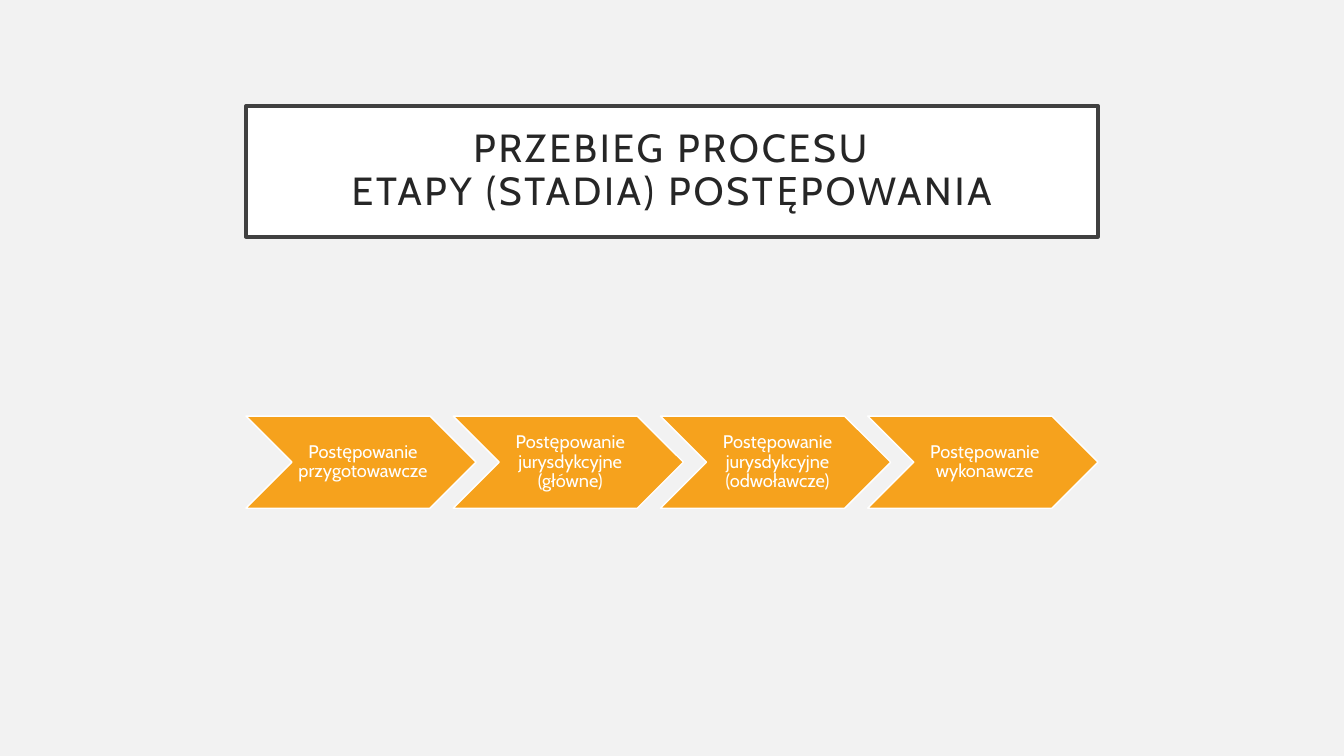
from dataclasses import dataclass

from pptx import Presentation
from pptx.dml.color import RGBColor
from pptx.enum.shapes import MSO_SHAPE
from pptx.enum.text import MSO_ANCHOR, PP_ALIGN
from pptx.slide import Slide
from pptx.util import Pt

RECT = MSO_SHAPE.RECTANGLE
CHEVRON = MSO_SHAPE.CHEVRON
MIDDLE = MSO_ANCHOR.MIDDLE
CENTER = PP_ALIGN.CENTER

PAPER = RGBColor(0xF2, 0xF2, 0xF2)
WHITE = RGBColor(0xFF, 0xFF, 0xFF)
ORANGE = RGBColor(0xF6, 0xA2, 0x1D)
FRAME = RGBColor(0x40, 0x40, 0x40)
INK = RGBColor(0x26, 0x26, 0x26)

FONT = "Cabin"
LEFT = 175.7
STEP = 148.05
TITLE = "PRZEBIEG PROCESU\vETAPY (STADIA) POSTĘPOWANIA"
STAGES = (
    "Postępowanie przygotowawcze",
    "Postępowanie jurysdykcyjne (główne)",
    "Postępowanie jurysdykcyjne (odwoławcze)",
    "Postępowanie wykonawcze",
)


@dataclass(frozen=True)
class Style:
    """Look of a box: lengths in points, insets as left, top, right, bottom."""
    kind: MSO_SHAPE
    fill: RGBColor
    line: RGBColor
    weight: float
    ink: RGBColor
    size: float
    insets: tuple[float, float, float, float]
    spread: float = 0


BANNER = Style(RECT, WHITE, FRAME, 2.5, INK, 28, (14.4, 14.4, 14.4, 14.4), 2)
STAGE = Style(CHEVRON, ORANGE, WHITE, 1, WHITE, 13, (4.1, 1.4, 1.4, 1.4))


def add_box(slide: Slide, style: Style, text: str,
            left: float, top: float, width: float, height: float) -> None:
    box = slide.shapes.add_shape(
        style.kind, Pt(left), Pt(top), Pt(width), Pt(height))
    box.shadow.inherit = False
    box.fill.solid()
    box.fill.fore_color.rgb = style.fill
    box.line.color.rgb = style.line
    box.line.width = Pt(style.weight)

    frame = box.text_frame
    frame.word_wrap = True
    frame.vertical_anchor = MIDDLE
    (frame.margin_left, frame.margin_top,
     frame.margin_right, frame.margin_bottom) = map(Pt, style.insets)

    para = frame.paragraphs[0]
    para.text = text
    para.alignment = CENTER
    para.line_spacing = 0.9
    para.font.name = FONT
    para.font.size = Pt(style.size)
    para.font.color.rgb = style.ink
    if style.spread:
        for run in para.runs:
            run._r.get_or_add_rPr().set("spc", str(round(style.spread * 100)))


def main() -> None:
    deck = Presentation()
    deck.slide_width = Pt(960)
    deck.slide_height = Pt(540)
    slide = deck.slides.add_slide(deck.slide_layouts[6])
    slide.background.fill.solid()
    slide.background.fill.fore_color.rgb = PAPER

    add_box(slide, BANNER, TITLE, LEFT, 75.6, 608.6, 93.6)
    for index, label in enumerate(STAGES):
        add_box(slide, STAGE, label, LEFT + index * STEP, 297.2, 164.4, 65.8)

    deck.save("out.pptx")


if __name__ == "__main__":
    main()
